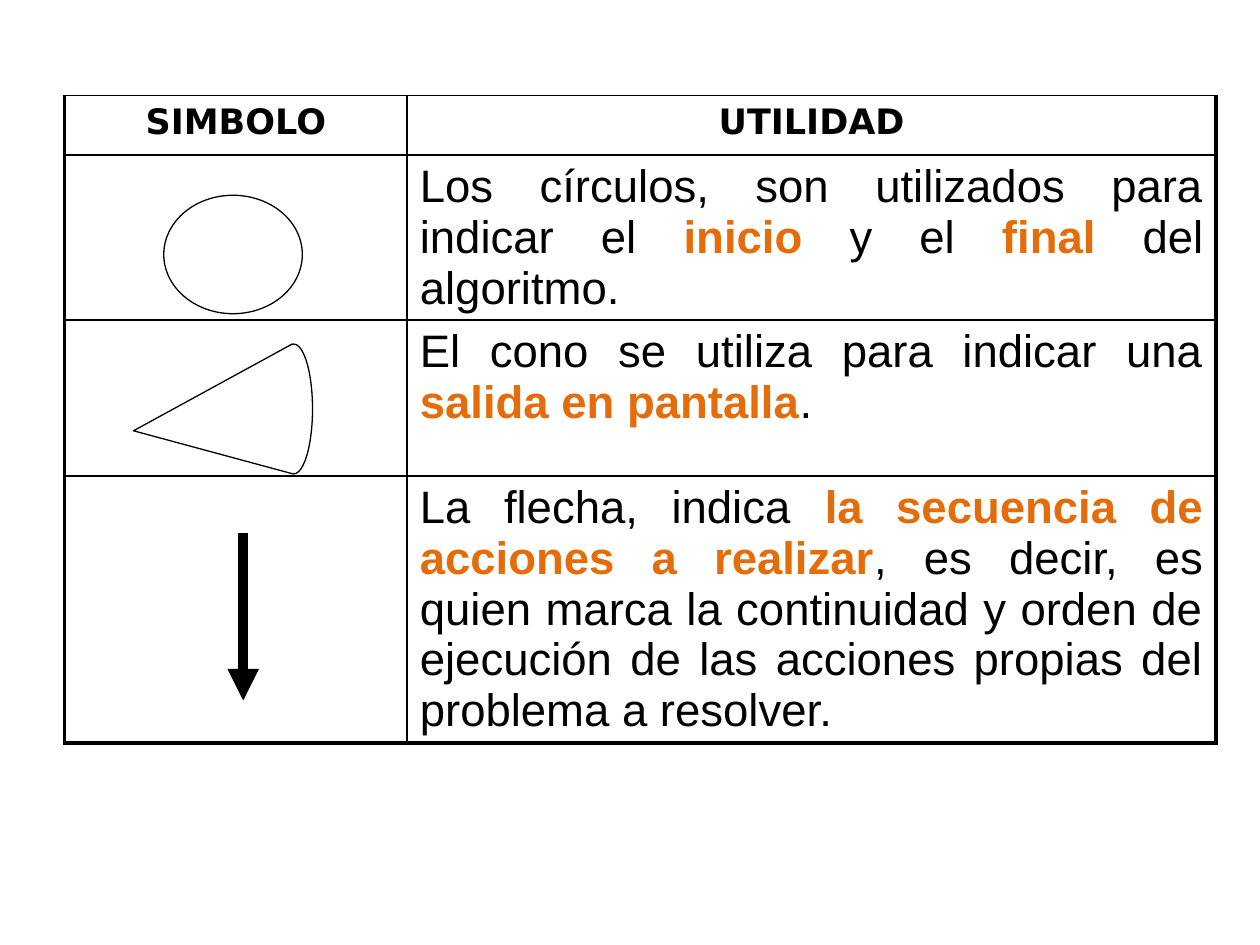
from dataclasses import dataclass

from lxml import etree
from pptx import Presentation
from pptx.dml.color import RGBColor
from pptx.enum.shapes import MSO_CONNECTOR, MSO_SHAPE
from pptx.enum.text import PP_ALIGN
from pptx.oxml.ns import qn
from pptx.util import Pt

CENTER = PP_ALIGN.CENTER
JUSTIFY = PP_ALIGN.JUSTIFY
ELLIPSE = MSO_SHAPE.OVAL
STRAIGHT = MSO_CONNECTOR.STRAIGHT

BLACK = "000000"
WHITE = "FFFFFF"
ORANGE = "E46C0A"
THIN_BORDER = 1
THICK_BORDER = 2.25
COLUMN_WIDTHS = (195.8, 462.2)
ROW_HEIGHTS = (34, 94, 89, 152.5)
HEADER_FONT = {"name": "DejaVu Sans", "size": Pt(20), "bold": True}
BODY_FONT = {"name": "Arial", "size": Pt(26), "bold": False}
KEY_FONT = {**BODY_FONT, "bold": True}


@dataclass
class Phrase:
    text: str
    key: bool = False


@dataclass
class Oval:
    left: float
    top: float
    width: float
    height: float


HEADERS = ("SIMBOLO", "UTILIDAD")
USES = (
    (
        Phrase("Los círculos, son utilizados para indicar el "),
        Phrase("inicio", True),
        Phrase(" y el "),
        Phrase("final", True),
        Phrase(" del algoritmo."),
    ),
    (
        Phrase("El cono se utiliza para indicar una "),
        Phrase("salida en pantalla", True),
        Phrase("."),
    ),
    (
        Phrase("La flecha, indica "),
        Phrase("la secuencia de acciones a realizar", True),
        Phrase(
            ", es decir, es quien marca la continuidad y orden de ejecución "
            "de las acciones propias del problema a resolver."
        ),
    ),
)
CIRCLE = Oval(93.6, 111.6, 79.2, 67.7)
CONE_BASE = Oval(157, 196.6, 21.6, 74.2)
CONE_SIDES = ((167, 196.6), (76.3, 246.2), (167, 270.7))


def color(value: str) -> RGBColor:
    return RGBColor.from_string(value)


def add_run(paragraph, text: str, font_values: dict, text_color: str) -> None:
    run = paragraph.add_run()
    run.text = text
    for name, value in font_values.items():
        setattr(run.font, name, value)
    run.font.color.rgb = color(text_color)


def set_border(cell, side: str, width: float) -> None:
    properties = cell._tc.get_or_add_tcPr()
    line = etree.SubElement(properties, qn(f"a:ln{side}"), w=str(Pt(width)))
    fill = etree.SubElement(line, qn("a:solidFill"))
    etree.SubElement(fill, qn("a:srgbClr"), val=BLACK)


def add_symbol_table(slide) -> None:
    frame = slide.shapes.add_table(
        len(ROW_HEIGHTS), len(COLUMN_WIDTHS), Pt(36.9), Pt(54.6),
        Pt(sum(COLUMN_WIDTHS)), Pt(sum(ROW_HEIGHTS)),
    )
    table = frame.table
    table.first_row = False
    table.horz_banding = False
    for column, width in zip(table.columns, COLUMN_WIDTHS):
        column.width = Pt(width)
    for row, height in zip(table.rows, ROW_HEIGHTS):
        row.height = Pt(height)

    last_row = len(ROW_HEIGHTS) - 1
    for row_index, row in enumerate(table.rows):
        for column_index, cell in enumerate(row.cells):
            borders = {
                "L": column_index == 0,
                "R": column_index == 1,
                "T": False,
                "B": row_index == last_row,
            }
            for side, thick in borders.items():
                set_border(cell, side, THICK_BORDER if thick else THIN_BORDER)
            cell.fill.background()

    for column_index, header in enumerate(HEADERS):
        paragraph = table.cell(0, column_index).text_frame.paragraphs[0]
        paragraph.alignment = CENTER
        add_run(paragraph, header, HEADER_FONT, BLACK)
    for row_index, phrases in enumerate(USES, start=1):
        paragraph = table.cell(row_index, 1).text_frame.paragraphs[0]
        paragraph.alignment = JUSTIFY
        for phrase in phrases:
            add_run(
                paragraph, phrase.text,
                KEY_FONT if phrase.key else BODY_FONT,
                ORANGE if phrase.key else BLACK,
            )


def format_outline(shape) -> None:
    shape.shadow.inherit = False
    shape.fill.solid()
    shape.fill.fore_color.rgb = color(WHITE)
    shape.line.color.rgb = color(BLACK)
    shape.line.width = Pt(0.75)


def add_oval(shapes, oval: Oval) -> None:
    shape = shapes.add_shape(
        ELLIPSE, Pt(oval.left), Pt(oval.top), Pt(oval.width), Pt(oval.height)
    )
    format_outline(shape)


def add_cone(slide) -> None:
    group = slide.shapes.add_group_shape()
    add_oval(group.shapes, CONE_BASE)
    start, *others = [(Pt(x), Pt(y)) for x, y in CONE_SIDES]
    builder = group.shapes.build_freeform(*start)
    builder.add_line_segments(others, close=False)
    format_outline(builder.convert_to_shape())


def add_arrow(slide) -> None:
    arrow = slide.shapes.add_connector(
        STRAIGHT, Pt(139), Pt(304.6), Pt(139), Pt(400.3)
    )
    arrow.line.color.rgb = color(BLACK)
    arrow.line.width = Pt(6)
    etree.SubElement(arrow.line._get_or_add_ln(), qn("a:tailEnd"), type="triangle")
    etree.SubElement(arrow._element.spPr, qn("a:effectLst"))


def main() -> None:
    presentation = Presentation()
    presentation.slide_width = Pt(720)
    presentation.slide_height = Pt(540)
    slide = presentation.slides.add_slide(presentation.slide_layouts[6])
    add_symbol_table(slide)
    add_oval(slide.shapes, CIRCLE)
    add_cone(slide)
    add_arrow(slide)
    presentation.save("out.pptx")


if __name__ == "__main__":
    main()
